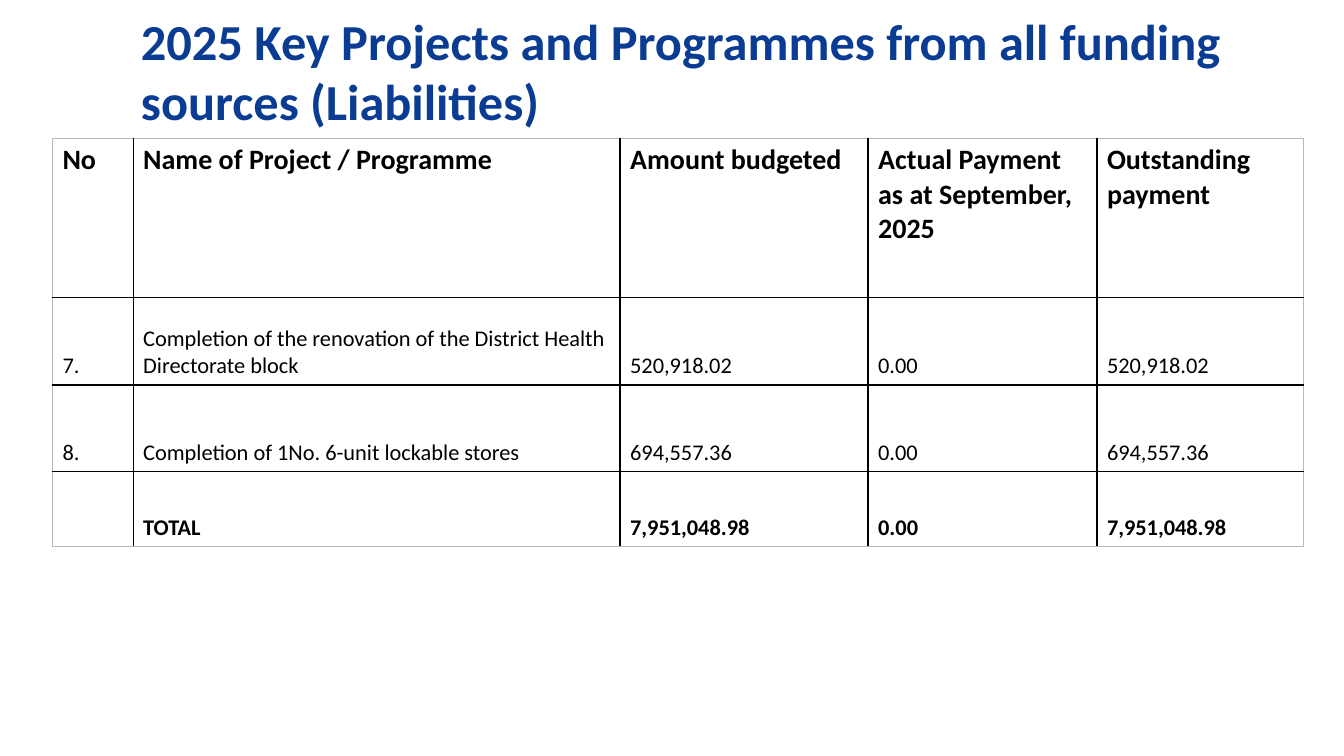
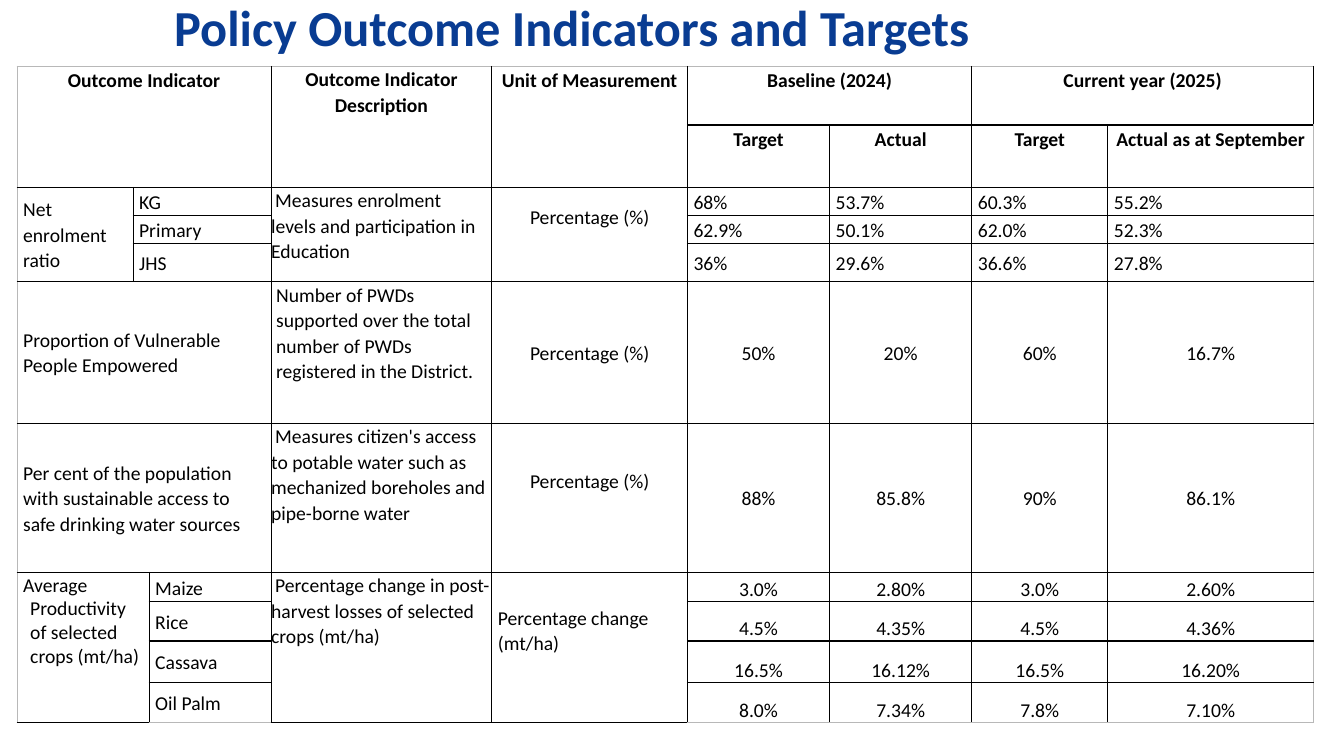
from dataclasses import dataclass

from lxml import etree
from pptx import Presentation
from pptx import util as u
from pptx.dml.color import RGBColor
from pptx.enum import text
from pptx.oxml import ns

# Shared look
PX = 9144  # one px is a hundredth of an inch
FONT = "Calibri"
NAVY = RGBColor(0x09, 0x3C, 0x92)
BLACK = RGBColor(0, 0, 0)
FRAME_GRAY = RGBColor(0xB8, 0xB8, 0xB8)
BORDER_WIDTH = u.Pt(1)
LEFT, CENTER = text.PP_ALIGN.LEFT, text.PP_ALIGN.CENTER
TOP, MIDDLE, BOTTOM = (text.MSO_ANCHOR.TOP, text.MSO_ANCHOR.MIDDLE,
                       text.MSO_ANCHOR.BOTTOM)


@dataclass
class Style:
    size: int = 14
    bold: bool = False
    align: object = LEFT
    anchor: object = MIDDLE
    insets: tuple = (6, 1, 6, 0)
    spacing: float = 1.07
    left_margin: int = 0
    indent: int = 0


# Styles of the liabilities table
LIABILITY_INSETS = (10, 5, 10, 5)
LIABILITY_HEAD = Style(20, True, anchor=TOP, insets=LIABILITY_INSETS, spacing=1)
LIABILITY_ROW = Style(16, anchor=BOTTOM, insets=LIABILITY_INSETS, spacing=1)
LIABILITY_TOTAL = Style(16, True, anchor=BOTTOM, insets=LIABILITY_INSETS,
                        spacing=1)

# Styles of the indicator table
HEAD = Style(bold=True, align=CENTER, anchor=TOP)
HEAD_TIGHT = Style(bold=True, align=CENTER, anchor=TOP, insets=(0, 0, 0, 0))
LABEL = Style()
CROP_GROUP = Style(anchor=TOP, spacing=1, left_margin=7, indent=-7)
DESCRIPTION = Style(anchor=TOP, insets=(0, 0, 0, 0), indent=4)
DESCRIPTION_NARROW = Style(anchor=TOP, insets=(0, 0, 6, 0), indent=4)
DESCRIPTION_INSET = Style(anchor=TOP, insets=(5, 1, 5, 0))
UNIT = Style(align=CENTER)
UNIT_RAISED = Style(align=CENTER, insets=(6, 1, 6, 35))
UNIT_LEFT = Style(insets=(6, 1, 6, 35))
VALUE_CENTER = Style(align=CENTER)
VALUE_LOW = Style(align=CENTER, anchor=BOTTOM, insets=(7, 0, 7, 0), spacing=1.15)

# Liabilities content
LIABILITY_TITLE = ("2025 Key Projects and Programmes from all funding "
                   "sources (Liabilities)")
LIABILITY_COLUMNS = [80, 483, 246, 227, 205]
LIABILITY_HEIGHTS = [158, 87, 86, 74]
LIABILITIES = [
    (LIABILITY_HEAD, ["No", "Name of Project / Programme", "Amount budgeted",
                      "Actual Payment as at September, 2025",
                      "Outstanding\npayment"]),
    (LIABILITY_ROW, ["7.", "Completion of the renovation of the District "
                     "Health Directorate block",
                     "520,918.02", "0.00", "520,918.02"]),
    (LIABILITY_ROW, ["8.", "Completion of 1No. 6-unit lockable stores",
                     "694,557.36", "0.00", "694,557.36"]),
    (LIABILITY_TOTAL, ["", "TOTAL", "7,951,048.98", "0.00", "7,951,048.98"]),
]

# Indicator content
INDICATOR_TITLE = "Policy Outcome Indicators and Targets"
INDICATOR_COLUMNS = [115, 13, 121, 219, 194, 141, 141, 135, 204]
INDICATOR_HEIGHTS = [58, 62, 28, 28, 37, 141, 148, 29, 39, 41, 40]
# (row, column, rows spanned, columns spanned, words, style)
INDICATORS = [
    (0, 0, 2, 3, "Outcome Indicator", HEAD),
    (0, 3, 2, 1, "Outcome Indicator Description", HEAD_TIGHT),
    (0, 4, 2, 1, "Unit of Measurement", HEAD),
    (0, 5, 1, 2, "Baseline (2024)", HEAD),
    (0, 7, 1, 2, "Current year (2025)", HEAD),
    (2, 0, 3, 1, "Net enrolment ratio", LABEL),
    (2, 1, 1, 2, "KG", LABEL),
    (3, 1, 1, 2, "Primary", LABEL),
    (4, 1, 1, 2, "JHS", LABEL),
    (2, 3, 3, 1, "Measures enrolment levels and participation in Education",
     DESCRIPTION_NARROW),
    (2, 4, 3, 1, "Percentage (%)", UNIT_RAISED),
    (5, 0, 1, 3, "Proportion of Vulnerable People Empowered", LABEL),
    (5, 3, 1, 1, "Number of PWDs supported over the total number of PWDs "
     "registered in the District.", DESCRIPTION_INSET),
    (5, 4, 1, 1, "Percentage (%)", UNIT),
    (6, 0, 1, 3, "Per cent of the population with sustainable access to "
     "safe drinking water sources", LABEL),
    (6, 3, 1, 1, "Measures citizen's access to potable water such as "
     "mechanized boreholes and pipe-borne water", DESCRIPTION),
    (6, 4, 1, 1, "Percentage (%)", UNIT_RAISED),
    (7, 0, 4, 2, "Average Productivity of selected crops (mt/ha)", CROP_GROUP),
    (7, 2, 1, 1, "Maize", LABEL),
    (8, 2, 1, 1, "Rice", LABEL),
    (9, 2, 1, 1, "Cassava", LABEL),
    (10, 2, 1, 1, "Oil Palm", LABEL),
    (7, 3, 4, 1, "Percentage change in post-harvest losses of selected "
     "crops (mt/ha)", DESCRIPTION),
    (7, 4, 4, 1, "Percentage change (mt/ha)", UNIT_LEFT),
]
# Target and actual figures, from the second row and sixth column on
FIRST_VALUE_ROW, FIRST_VALUE_COLUMN = 1, 5
VALUES = [
    (HEAD, ["Target", "Actual", "Target", "Actual as at September"]),
    (LABEL, ["68%", "53.7%", "60.3%", "55.2%"]),
    (LABEL, ["62.9%", "50.1%", "62.0%", "52.3%"]),
    (LABEL, ["36%", "29.6%", "36.6%", "27.8%"]),
    (VALUE_CENTER, ["50%", "20%", "60%", "16.7%"]),
    (VALUE_CENTER, ["88%", "85.8%", "90%", "86.1%"]),
    (VALUE_LOW, ["3.0%", "2.80%", "3.0%", "2.60%"]),
    (VALUE_LOW, ["4.5%", "4.35%", "4.5%", "4.36%"]),
    (VALUE_LOW, ["16.5%", "16.12%", "16.5%", "16.20%"]),
    (VALUE_LOW, ["8.0%", "7.34%", "7.8%", "7.10%"]),
]


def px(*lengths):
    return [u.Emu(length * PX) for length in lengths]


def set_font(para, size, bold, colour):
    font = para.font
    font.name, font.size, font.bold = FONT, u.Pt(size), bold
    font.color.rgb = colour


def add_title(page, words, place, anchor):
    box = page.shapes.add_textbox(*px(*place))
    frame = box.text_frame
    frame.word_wrap = True
    frame.vertical_anchor = anchor
    (frame.margin_left, frame.margin_top,
     frame.margin_right, frame.margin_bottom) = px(10, 10, 10, 10)
    frame.text = words
    set_font(frame.paragraphs[0], 36, True, NAVY)


def set_borders(cell, outer_sides):
    """Draw gray outer and black inner lines; lines come before the fill."""
    properties = cell._tc.get_or_add_tcPr()
    for index, side in enumerate("LRTB"):
        colour = FRAME_GRAY if side in outer_sides else BLACK
        line = etree.Element(ns.qn("a:ln" + side), w=str(int(BORDER_WIDTH)))
        fill = etree.SubElement(line, ns.qn("a:solidFill"))
        etree.SubElement(fill, ns.qn("a:srgbClr"), val=str(colour))
        properties.insert(index, line)


def add_grid(page, left, top, columns, heights):
    table = page.shapes.add_table(
        len(heights), len(columns),
        *px(left, top, sum(columns), sum(heights))).table
    table.first_row = table.horz_banding = False
    for column, width in zip(table.columns, px(*columns)):
        column.width = width
    for row, height in zip(table.rows, px(*heights)):
        row.height = height
    last_row, last_column = len(heights) - 1, len(columns) - 1
    for index, cell in enumerate(table.iter_cells()):
        row, column = divmod(index, len(columns))
        edges = {"L": column == 0, "R": column == last_column,
                 "T": row == 0, "B": row == last_row}
        cell.fill.background()
        set_borders(cell, [side for side, outer in edges.items() if outer])
    return table


def write_cell(cell, words, style):
    (cell.margin_left, cell.margin_top,
     cell.margin_right, cell.margin_bottom) = px(*style.insets)
    cell.vertical_anchor = style.anchor
    cell.text = words
    for para in cell.text_frame.paragraphs:
        para.alignment = style.align
        para.line_spacing = style.spacing
        properties = para._p.get_or_add_pPr()
        properties.set("marL", str(style.left_margin * PX))
        properties.set("indent", str(style.indent * PX))
        set_font(para, style.size, style.bold, BLACK)


def write_block(table, block, first_row=0, first_column=0):
    for row, (style, entries) in enumerate(block, first_row):
        for column, words in enumerate(entries, first_column):
            write_cell(table.cell(row, column), words, style)


def add_liabilities(page):
    add_title(page, LIABILITY_TITLE, (130, 0, 1140, 121), TOP)
    table = add_grid(page, 52, 137, LIABILITY_COLUMNS, LIABILITY_HEIGHTS)
    write_block(table, LIABILITIES)


def add_indicators(page):
    add_title(page, INDICATOR_TITLE, (163, 20, 894, 46), BOTTOM)
    table = add_grid(page, 17, 66, INDICATOR_COLUMNS, INDICATOR_HEIGHTS)
    for row, column, tall, wide, words, style in INDICATORS:
        cell = table.cell(row, column)
        if tall * wide > 1:
            cell.merge(table.cell(row + tall - 1, column + wide - 1))
        write_cell(cell, words, style)
    write_block(table, VALUES, FIRST_VALUE_ROW, FIRST_VALUE_COLUMN)


def main():
    deck = Presentation()
    deck.slide_width, deck.slide_height = px(1333, 750)
    for build in (add_liabilities, add_indicators):
        build(deck.slides.add_slide(deck.slide_layouts[6]))
    deck.save("out.pptx")


if __name__ == "__main__":
    main()
